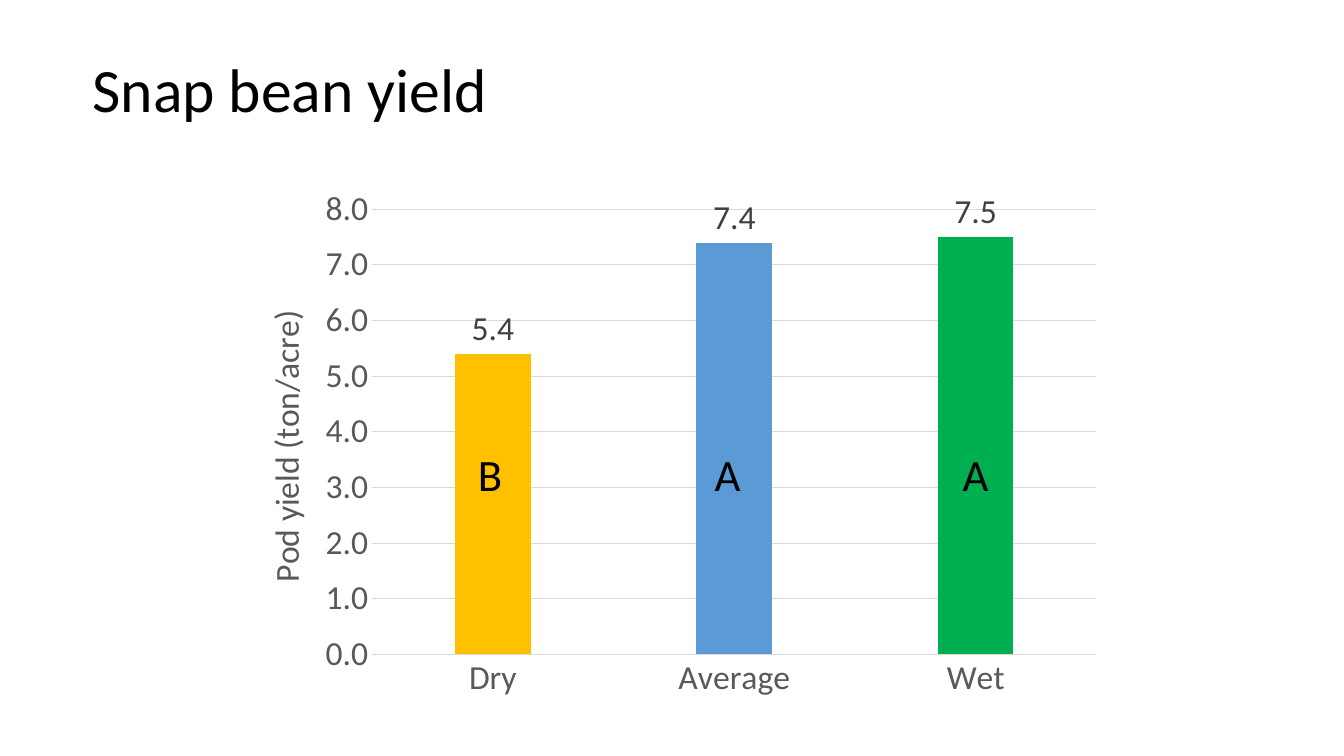
from pptx import Presentation
from pptx.chart.data import CategoryChartData as ChartData
from pptx.dml.color import RGBColor as RGB
from pptx.enum.chart import XL_CHART_TYPE as Kind
from pptx.enum.chart import XL_LABEL_POSITION as Spot
from pptx.enum.chart import XL_TICK_MARK as Tick
from pptx.enum.text import MSO_ANCHOR as Anchor
from pptx.oxml import parse_xml
from pptx.oxml.ns import nsdecls, qn
from pptx.util import Inches, Pt

FACE = "Calibri"
BLACK = RGB(0x00, 0x00, 0x00)
GREY = RGB(0x59, 0x59, 0x59)
DARK = RGB(0x40, 0x40, 0x40)
RULE = RGB(0xD9, 0xD9, 0xD9)
YIELDS = {
    "Dry": (5.4, RGB(0xFF, 0xC0, 0x00)),
    "Average": (7.4, RGB(0x5B, 0x9B, 0xD5)),
    "Wet": (7.5, RGB(0x00, 0xB0, 0x50)),
}


def style(font, size, color):
    font.name, font.size, font.bold = FACE, Pt(size), False
    font.color.rgb = color


def rule(line):
    line.color.rgb = RULE
    line.width = Pt(0.75)


def place(part, target=None, **fracs):
    """Fix a chart part's place as fractions of the chart's size."""
    tags = f'<c:layoutTarget val="{target}"/>' if target else ""
    tags += '<c:xMode val="edge"/><c:yMode val="edge"/>'
    tags += "".join(f'<c:{key} val="{val}"/>' for key, val in fracs.items())
    layout = parse_xml(
        f'<c:layout {nsdecls("c")}><c:manualLayout>{tags}</c:manualLayout></c:layout>')
    old = part.find(qn("c:layout"))
    if old is None:
        part.insert(0, layout)
    else:
        part.replace(old, layout)


def add_text(slide, box, text, size, anchor=Anchor.TOP, tabs=()):
    frame = slide.shapes.add_textbox(*map(Inches, box)).text_frame
    frame.word_wrap = True
    frame.vertical_anchor = anchor
    para = frame.paragraphs[0]
    para.text = text
    if tabs:
        stops = "".join(f'<a:tab pos="{Inches(t)}" algn="l"/>' for t in tabs)
        para._p.get_or_add_pPr().append(
            parse_xml(f'<a:tabLst {nsdecls("a")}>{stops}</a:tabLst>'))
    style(para.font, size, BLACK)
    return para


def set_axes(chart):
    cat, val = chart.category_axis, chart.value_axis
    for axis in (cat, val):
        axis.major_tick_mark = axis.minor_tick_mark = Tick.NONE
        style(axis.tick_labels.font, 24, GREY)
    rule(cat.format.line)
    val.format.line.fill.background()
    rule(val.major_gridlines.format.line)
    val.minimum_scale, val.maximum_scale, val.major_unit = 0, 8, 1
    val.tick_labels.number_format = "0.0"
    val.tick_labels.number_format_is_linked = False

    title = val.axis_title
    frame = title.text_frame
    frame.text = "Pod yield (ton/acre)"
    style(frame.paragraphs[0].font, 24, GREY)
    turn = title._element.find(".//" + qn("a:bodyPr"))
    turn.set("rot", "-5400000")
    turn.set("vert", "horz")
    place(title._element, x=0.03, y=0.24)


def add_bars(slide, box):
    data = ChartData(number_format="0.0")
    data.categories = list(YIELDS)
    data.add_series("Series 1", [val for val, _ in YIELDS.values()])
    chart = slide.shapes.add_chart(
        Kind.COLUMN_CLUSTERED, *map(Inches, box), data).chart
    chart.has_title = chart.has_legend = False
    style(chart.font, 24, BLACK)
    set_axes(chart)

    plot = chart.plots[0]
    plot.gap_width, plot.overlap = 219, -27
    plot.vary_by_categories = False
    bars = plot.series[0]
    for i, (_, color) in enumerate(YIELDS.values()):
        fill = bars.points[i].format.fill
        fill.solid()
        fill.fore_color.rgb = color
    labels = bars.data_labels
    labels.show_value = True
    labels.position = Spot.OUTSIDE_END
    labels.number_format = "0.0"
    labels.number_format_is_linked = False
    style(labels.font, 24, DARK)
    area = chart._chartSpace.find(".//" + qn("c:plotArea"))
    place(area, "inner", x=0.16, y=0.06, w=0.82, h=0.84)


def main():
    deck = Presentation()
    deck.slide_width, deck.slide_height = Inches(13.33), Inches(7.5)
    slide = deck.slides.add_slide(deck.slide_layouts[6])
    title = add_text(slide, (0.82, 0.19, 11.5, 1.45),
                     "Snap bean yield", 44, Anchor.MIDDLE)
    title.line_spacing = 0.9
    add_bars(slide, (2.29, 1.76, 8.76, 5.26))
    add_text(slide, (4.64, 4.38, 6.58, 0.64), "B\tA\tA", 32, tabs=(2.35, 4.81))
    deck.save("out.pptx")


if __name__ == "__main__":
    main()
